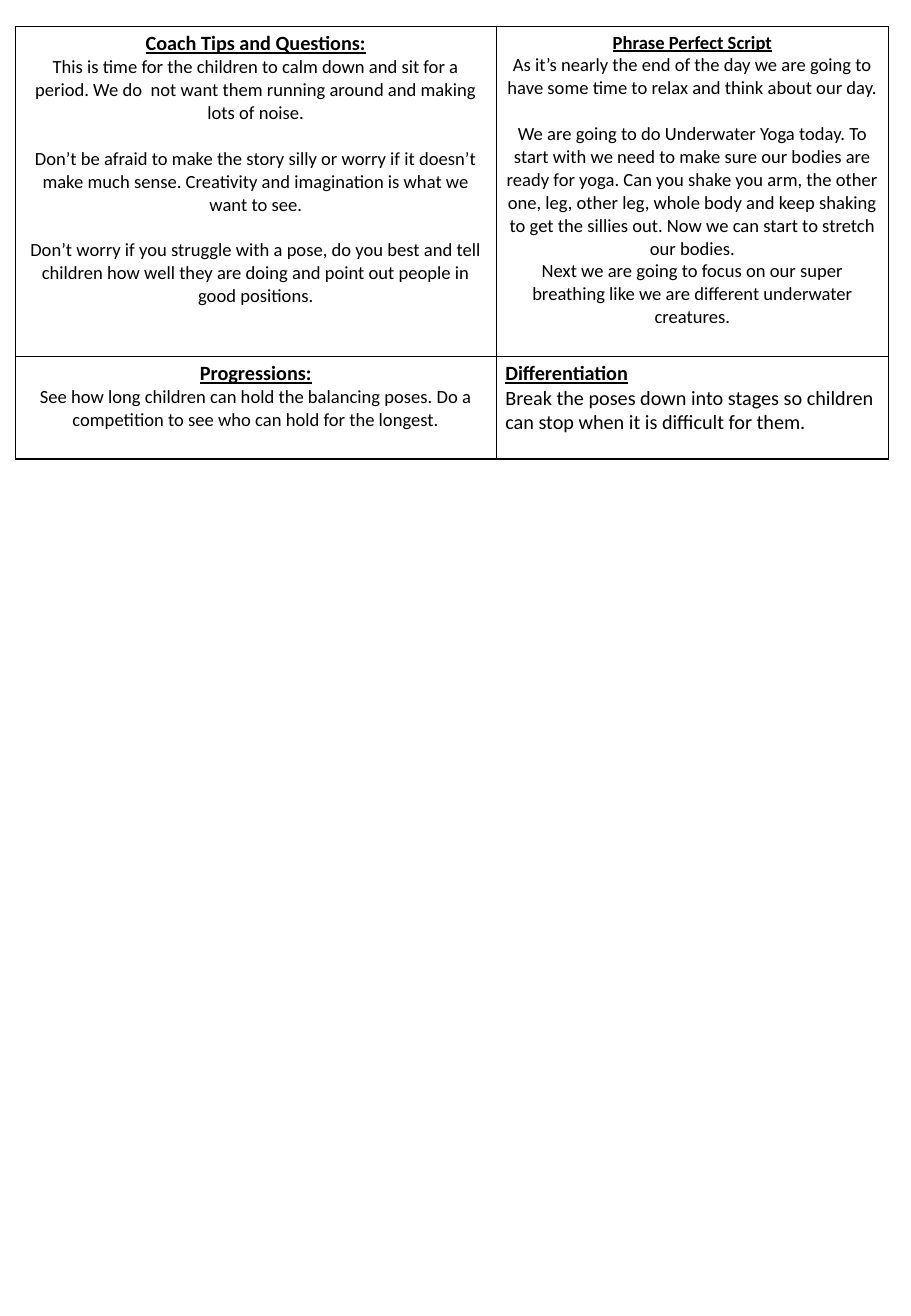
from lxml import etree
from pptx import Presentation
from pptx.dml.color import RGBColor
from pptx.enum import text
from pptx.oxml import ns
from pptx.util import Pt

COLOURS = {"ink": "000000", "paper": "FFFFFF"}
CENTER, LEFT = text.PP_ALIGN.CENTER, text.PP_ALIGN.LEFT
COLUMNS = [151.2, 133.9, 232.6]
ROWS = [195.6, 61]
LINE_GAP = 13.5

TIPS = [
    ("This is time for the children to calm down and sit for a period. We do  not want "
     "them running around and making lots of noise.", 0),
    ("Don’t be afraid to make the story silly or worry if it doesn’t make much sense. "
     "Creativity and imagination is what we want to see.", LINE_GAP),
    ("Don’t worry if you struggle with a pose, do you best and tell children how well "
     "they are doing and point out people in good positions.", LINE_GAP),
]
SCRIPT = [
    ("As it’s nearly the end of the day we are going to have some time to relax and "
     "think about our day.", 0),
    ("We are going to do Underwater Yoga today. To start with we need to make sure our "
     "bodies are ready for yoga. Can you shake you arm, the other one, leg, other leg, "
     "whole body and keep shaking to get the sillies out. Now we can start to stretch "
     "our bodies.", LINE_GAP),
    ("Next we are going to focus on our super breathing like we are different "
     "underwater creatures.", 0),
]
PROGRESSIONS = [
    ("See how long children can hold the balancing poses. Do a competition to see who "
     "can hold for the longest.", 0),
]
DIFFERENTIATION = [
    ("Break the poses down into stages so children can stop when it is difficult for "
     "them.", 0),
]


class LessonSheet:
    """Holds the style and the current slide, and draws the lesson table."""

    def __init__(self, slide, font="Calibri"):
        self.slide = slide
        self.font = font

    def table(self, left, top, columns, rows):
        frame = self.slide.shapes.add_table(
            len(rows), len(columns), Pt(left), Pt(top), Pt(sum(columns)), Pt(sum(rows)))
        table = frame.table
        table.first_row = table.horz_banding = False
        for column, width in zip(table.columns, columns):
            column.width = Pt(width)
        for row, height in zip(table.rows, rows):
            row.height = Pt(height)
        for cell in table.iter_cells():
            self.style_cell(cell)
        return table

    def style_cell(self, cell):
        cell.margin_left = cell.margin_right = Pt(5.4)
        cell.margin_top = cell.margin_bottom = Pt(2.9)
        cell.fill.solid()
        cell.fill.fore_color.rgb = RGBColor.from_string(COLOURS["paper"])
        props = cell._tc.get_or_add_tcPr()
        for i, side in enumerate(("lnL", "lnR", "lnT", "lnB")):
            line = etree.Element(ns.qn(f"a:{side}"), w=str(Pt(1)))
            fill = etree.SubElement(line, ns.qn("a:solidFill"))
            etree.SubElement(fill, ns.qn("a:srgbClr"), val=COLOURS["ink"])
            props.insert(i, line)

    def paragraph(self, p, words, size, align, heading=False, gap=0):
        p.alignment = align
        p.space_before = Pt(gap)
        r = p.add_run()
        r.text = words
        r.font.name = self.font
        r.font.size = Pt(size)
        r.font.bold = r.font.underline = heading
        r.font.color.rgb = RGBColor.from_string(COLOURS["ink"])

    def section(self, cell, heading, body, heading_size=12, size=11, align=CENTER):
        tf = cell.text_frame
        self.paragraph(tf.paragraphs[0], heading, heading_size, align, heading=True)
        for words, gap in body:
            self.paragraph(tf.add_paragraph(), words, size, align, gap=gap)


def main():
    prs = Presentation()
    prs.slide_width, prs.slide_height = Pt(540), Pt(780)
    sheet = LessonSheet(prs.slides.add_slide(prs.slide_layouts[6]))
    table = sheet.table(9.1, 15.6, COLUMNS, ROWS)
    for row in range(len(ROWS)):
        table.cell(row, 0).merge(table.cell(row, 1))
    sheet.section(table.cell(0, 0), "Coach Tips and Questions:", TIPS)
    sheet.section(table.cell(0, 2), "Phrase Perfect Script", SCRIPT, heading_size=11)
    sheet.section(table.cell(1, 0), "Progressions:", PROGRESSIONS)
    sheet.section(table.cell(1, 2), "Differentiation", DIFFERENTIATION, size=12, align=LEFT)
    prs.save("out.pptx")


if __name__ == "__main__":
    main()
